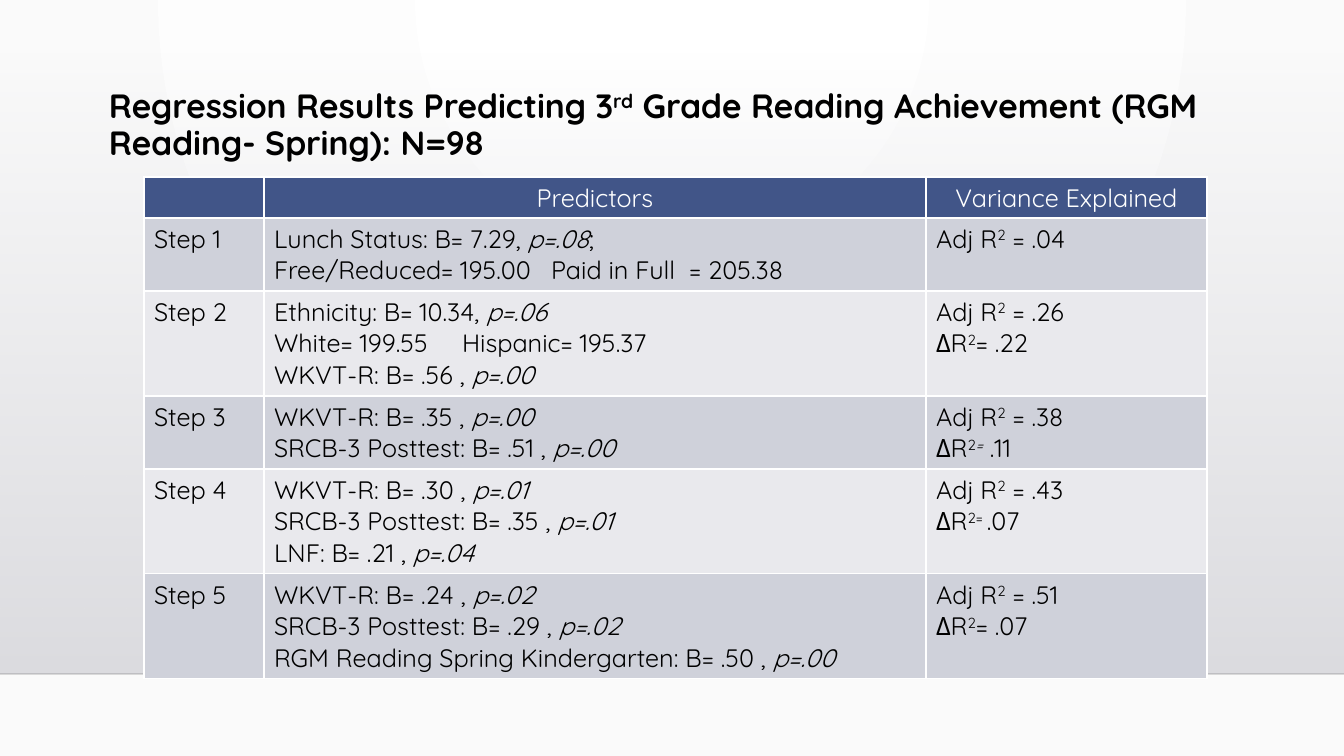
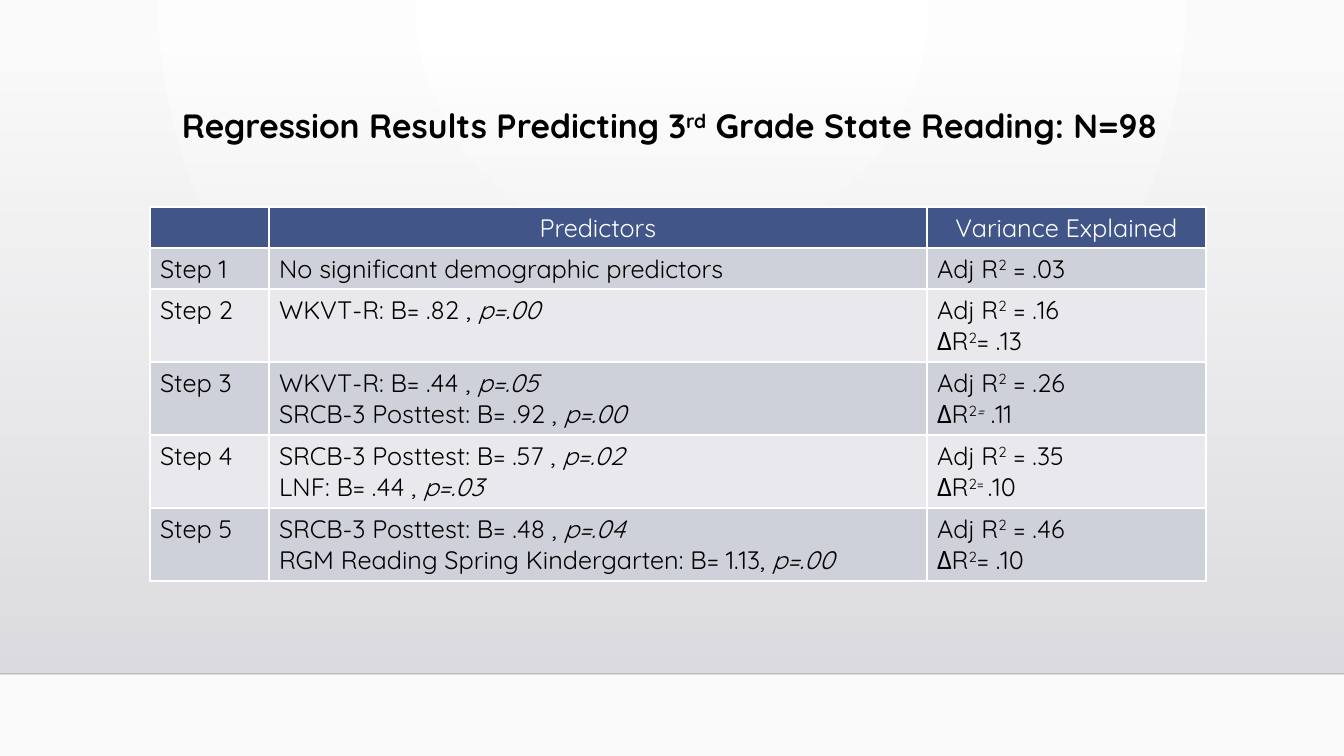
from dataclasses import dataclass

from lxml import etree
from pptx import Presentation
from pptx import util as u
from pptx.dml.color import RGBColor
from pptx.enum import shapes, text
from pptx.oxml.ns import qn

# Content: *...* is italic, ^...^ is superscript, a tuple is (line, tab stops)
HEADER = ["", "Predictors", "Variance Explained"]
SLIDES = [
    {
        "title": "Regression Results Predicting 3^rd^ Grade Reading Achievement "
                 "(RGM Reading- Spring): N=98",
        "title_box": (99, 85, 1159, 107),
        "table_at": (144, 177),
        "columns": (120, 662, 281),
        "steps": [
            (["Lunch Status: B= 7.29, *p=.08*;",
              ("Free/Reduced= 195.00\tPaid in Full\t= 205.38", (277, 415))],
             ["Adj R^2^ = .04"]),
            (["Ethnicity: B= 10.34, *p=.06*",
              ("White= 199.55\tHispanic= 195.37", (188,)),
              "WKVT-R: B= .56 , *p=.00*"],
             ["Adj R^2^ = .26", "ΔR^2^= .22"]),
            (["WKVT-R: B= .35 , *p=.00*", "SRCB-3 Posttest: B= .51 , *p=.00*"],
             ["Adj R^2^ = .38", "ΔR^2*=*^ .11"]),
            (["WKVT-R: B= .30 , *p=.01*", "SRCB-3 Posttest: B= .35 , *p=.01*",
              "LNF: B= .21 , *p=.04*"],
             ["Adj R^2^ = .43", "ΔR^2= ^.07"]),
            (["WKVT-R: B= .24 , *p=.02*", "SRCB-3 Posttest: B= .29 , *p=.02*",
              "RGM Reading Spring Kindergarten: B= .50 , *p=.00*"],
             ["Adj R^2^ = .51", "ΔR^2^= .07"]),
        ],
    },
    {
        "title": "Regression Results Predicting 3^rd^ Grade State Reading: N=98",
        "title_box": (172, 105, 1159, 70),
        "table_at": (150, 207),
        "columns": (119, 658, 279),
        "steps": [
            (["No significant demographic predictors"], ["Adj R^2^ = .03"]),
            (["WKVT-R: B= .82 , *p=.00*"], ["Adj R^2^ = .16", "ΔR^2^= .13"]),
            (["WKVT-R: B= .44 , *p=.05*", "SRCB-3 Posttest: B= .92 , *p=.00*"],
             ["Adj R^2^ = .26", "ΔR^2*=*^ .11"]),
            (["SRCB-3 Posttest: B= .57 , *p=.02*", "LNF: B= .44 , *p=.03*"],
             ["Adj R^2^ = .35", "ΔR^2= ^.10"]),
            (["SRCB-3 Posttest: B= .48 , *p=.04*",
              "RGM Reading Spring Kindergarten: B= 1.13, *p=.00*"],
             ["Adj R^2^ = .46", "ΔR^2^= .10"]),
        ],
    },
]


@dataclass(frozen=True)
class Theme:
    font: str = "Quicksand"
    title_pt: int = 24
    table_pt: int = 18
    ink: str = "000000"
    white: str = "FFFFFF"
    header: str = "415588"
    bands: tuple = ("CFD1DA", "E9E9ED")
    backdrop: tuple = ("FFFFFF", "FAFAFA")
    wall: tuple = ("DCDCE0", "DEDEE2")
    floor_line: str = "000001"


THEME = Theme()
WIDTH, HEIGHT = 1344, 756
WALL_TOP, FLOOR = 51, 674
ROW, EXTRA_LINE = 41, 32


def px(n):
    return u.Emu(round(n * 914400 / 100.8))


def rgb(code):
    return RGBColor.from_string(code)


def set_alpha(color_parent, percent):
    color = color_parent.find(".//" + qn("a:srgbClr"))
    etree.SubElement(color, qn("a:alpha"), val=str(percent * 1000))


def set_gradient(fill, colors):
    fill.gradient()
    for stop, code in zip(fill.gradient_stops, colors):
        stop.color.rgb = rgb(code)


# Text
def write_line(paragraph, line, size, color, bold=False):
    line, stops = line if isinstance(line, tuple) else (line, ())
    if stops:
        tabs = etree.SubElement(paragraph._p.get_or_add_pPr(), qn("a:tabLst"))
        for stop in stops:
            etree.SubElement(tabs, qn("a:tab"), pos=str(px(stop)), algn="l")
    font = paragraph.font
    font.name, font.size, font.bold = THEME.font, u.Pt(size), bold
    font.color.rgb = rgb(color)
    italic = raised = False
    for chunk in line.replace("*", "|*|").replace("^", "|^|").split("|"):
        if chunk == "*":
            italic = not italic
        elif chunk == "^":
            raised = not raised
        elif chunk:
            run = paragraph.add_run()
            run.text = chunk
            if italic:
                run.font.italic = True
            if raised:
                run._r.get_or_add_rPr().set("baseline", "30000")


# Shared backdrop, wall and floor line
def style_master(master):
    set_gradient(master.background.fill, THEME.backdrop)
    gradient = master.element.find(".//" + qn("a:gradFill"))
    gradient.remove(gradient.find(qn("a:lin")))
    circle = etree.SubElement(gradient, qn("a:path"), path="circle")
    etree.SubElement(circle, qn("a:fillToRect"),
                     l="43000", t="0", r="43000", b="100000")


def add_room(slide):
    wall = slide.shapes.add_shape(shapes.MSO_SHAPE.RECTANGLE, 0, px(WALL_TOP),
                                  px(WIDTH), px(FLOOR - WALL_TOP))
    wall.shadow.inherit = False
    wall.line.fill.background()
    set_gradient(wall.fill, THEME.wall)
    wall.fill.gradient_angle = 270
    set_alpha(wall._element.spPr.find(".//" + qn("a:gs")), 0)

    floor = slide.shapes.add_connector(shapes.MSO_CONNECTOR.STRAIGHT,
                                       0, px(FLOOR), px(WIDTH), px(FLOOR))
    floor.line.width = u.Pt(1)
    floor.line.color.rgb = rgb(THEME.floor_line)
    set_alpha(floor._element.spPr, 20)
    etree.SubElement(floor._element.spPr, qn("a:effectLst"))


def add_title(slide, title, box):
    frame = slide.shapes.add_textbox(*map(px, box)).text_frame
    frame.word_wrap = True
    heading = frame.paragraphs[0]
    heading.line_spacing = 0.9
    write_line(heading, title, THEME.title_pt, THEME.ink, bold=True)


# Results table; the default table style supplies the white borders
def fill_cell(cell, lines, fill, color, align):
    cell.fill.solid()
    cell.fill.fore_color.rgb = rgb(fill)
    frame = cell.text_frame
    for i, line in enumerate(lines):
        paragraph = frame.add_paragraph() if i else frame.paragraphs[0]
        paragraph.alignment = align
        write_line(paragraph, line, THEME.table_pt, color)


def add_results(slide, at, columns, steps):
    rows = [[[label] for label in HEADER]]
    rows += [[[f"Step {n}"], *step] for n, step in enumerate(steps, 1)]
    heights = [ROW + EXTRA_LINE * (max(map(len, row)) - 1) for row in rows]
    results = slide.shapes.add_table(len(rows), len(columns), *map(px, at),
                                     px(sum(columns)), px(sum(heights))).table
    for column, width in zip(results.columns, columns):
        column.width = px(width)
    for r, row in enumerate(rows):
        results.rows[r].height = px(heights[r])
        if r == 0:
            look = THEME.header, THEME.white, text.PP_ALIGN.CENTER
        else:
            look = THEME.bands[(r - 1) % 2], THEME.ink, text.PP_ALIGN.LEFT
        for c, lines in enumerate(row):
            fill_cell(results.cell(r, c), lines, *look)


def main():
    prs = Presentation()
    prs.slide_width, prs.slide_height = px(WIDTH), px(HEIGHT)
    style_master(prs.slide_master)
    for content in SLIDES:
        slide = prs.slides.add_slide(prs.slide_layouts[6])
        add_room(slide)
        add_title(slide, content["title"], content["title_box"])
        add_results(slide, content["table_at"], content["columns"], content["steps"])
    prs.save("out.pptx")


if __name__ == "__main__":
    main()
